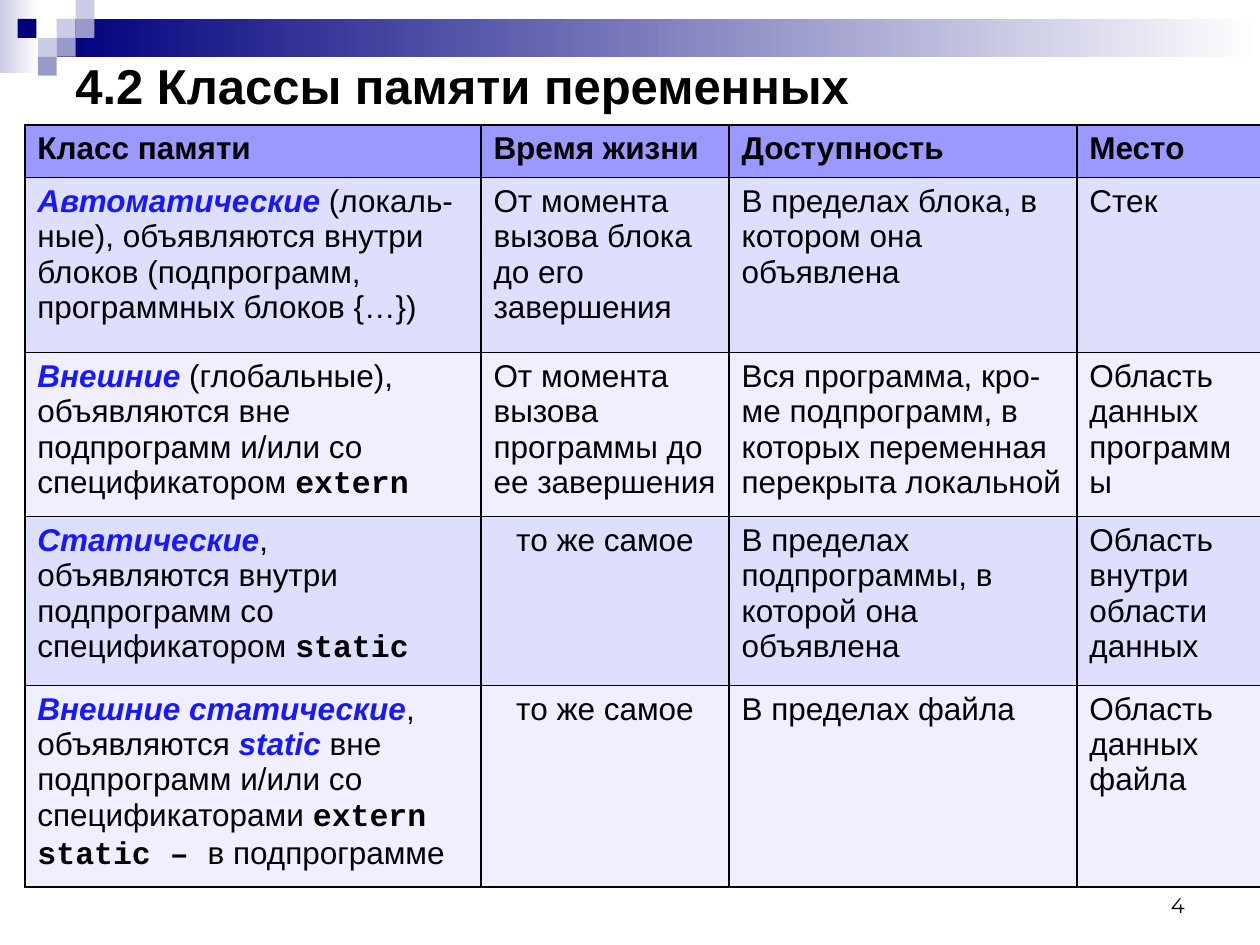
from lxml import etree
from pptx import Presentation
from pptx.dml.color import RGBColor
from pptx.enum.shapes import MSO_SHAPE
from pptx.enum.text import MSO_ANCHOR, PP_ALIGN
from pptx.oxml.ns import qn
from pptx.util import Pt

RECTANGLE = MSO_SHAPE.RECTANGLE
LEFT, CENTER, RIGHT = PP_ALIGN.LEFT, PP_ALIGN.CENTER, PP_ALIGN.RIGHT
MIDDLE, BOTTOM = MSO_ANCHOR.MIDDLE, MSO_ANCHOR.BOTTOM

NAVY, LILAC, VIOLET, WHITE, BLACK = "00007D", "CCCCE6", "9999CC", "FFFFFF", "000000"
HEADER_FILL, ROW_FILLS = "9999FF", ("DEDEFF", "EFEFFF")
TERM = {"color": "1818FF", "bold": True, "italic": True}
CODE = {"font": "Courier New", "bold": True}
HEADER = {"bold": True}
PLAIN = {}

GRID = 10.8
SQUARES = [(3, 1, LILAC), (4, 0, LILAC), (4, 1, VIOLET), (2, 2, LILAC),
           (0.93, 1, NAVY), (3, 2, VIOLET), (2, 3, VIOLET)]
COLUMN_WIDTHS = (260.64, 141.84, 198.72, 105.12)
ROW_HEIGHTS = (30.24, 100.08, 93.6, 96.48, 111)
HEADINGS = ("Класс памяти", "Время жизни", "Доступность", "Место")
CLASSES = [
    ([("Автоматические ", TERM),
      ("(локаль-ные), объявляются внутри блоков (подпрограмм, программных блоков {…})", PLAIN)],
     "От момента вызова блока до его завершения",
     "В пределах блока, в котором она объявлена",
     "Стек"),
    ([("Внешние", TERM),
      (" (глобальные), объявляются вне подпрограмм и/или со спецификатором ", PLAIN),
      ("extern", CODE)],
     "От момента вызова программы до ее завершения",
     "Вся программа, кро-ме подпрограмм, в которых переменная перекрыта локальной",
     "Область данных программы"),
    ([("Статические", TERM),
      (", объявляются внутри подпрограмм со спецификатором ", PLAIN),
      ("static", CODE)],
     "то же самое",
     "В пределах подпрограммы, в которой она объявлена",
     "Область внутри области данных"),
    ([("Внешние статические", TERM), (", объявляются ", PLAIN), ("static ", TERM),
      ("вне подпрограмм и/или со спецификаторами ", PLAIN),
      ("extern static – ", CODE), ("в подпрограмме", PLAIN)],
     "то же самое",
     "В пределах файла",
     "Область данных\nфайла"),
]


def rgb(value):
    """Return the colour for a hex string."""
    return RGBColor.from_string(value)


def add_span(para, text, size=18, font="Arial", color=BLACK, bold=False, italic=False):
    """Append formatted text to a paragraph."""
    span = para.add_run()
    span.text = text
    span.font.size = Pt(size)
    span.font.name = font
    span.font.color.rgb = rgb(color)
    span.font.bold = bold
    span.font.italic = italic


def add_border(cell, color=BLACK, width=1):
    """Draw a solid line on all four sides of a cell."""
    properties = cell._tc.get_or_add_tcPr()
    for side in ("a:lnL", "a:lnR", "a:lnT", "a:lnB"):
        line = etree.SubElement(properties, qn(side), w=str(Pt(width)))
        fill = etree.SubElement(line, qn("a:solidFill"))
        etree.SubElement(fill, qn("a:srgbClr"), val=color)


class SlideBuilder:
    """Hold the current slide and draw each kind of element on it."""

    def __init__(self, slide):
        """Keep the slide to draw on."""
        self.slide = slide

    def block(self, left, top, width, height, color, end_color=None):
        """Add a plain rectangle, faded to the right if an end colour is given."""
        shape = self.slide.shapes.add_shape(
            RECTANGLE, Pt(left), Pt(top), Pt(width), Pt(height))
        shape.shadow.inherit = False
        shape.line.fill.background()
        if end_color:
            shape.fill.gradient()
            shape.fill.gradient_angle = 0
            for stop, stop_color in zip(shape.fill.gradient_stops, (color, end_color)):
                stop.color.rgb = rgb(stop_color)
        else:
            shape.fill.solid()
            shape.fill.fore_color.rgb = rgb(color)

    def text(self, left, top, width, height, text, anchor, align=LEFT, **style):
        """Add a wrapped text box with one paragraph."""
        box = self.slide.shapes.add_textbox(Pt(left), Pt(top), Pt(width), Pt(height))
        frame = box.text_frame
        frame.word_wrap = True
        frame.vertical_anchor = anchor
        para = frame.paragraphs[0]
        para.alignment = align
        add_span(para, text, **style)

    def cell(self, cell, spans, fill, align=LEFT):
        """Fill a table cell with formatted spans, splitting paragraphs at newlines."""
        add_border(cell)
        cell.fill.solid()
        cell.fill.fore_color.rgb = rgb(fill)
        para = cell.text_frame.paragraphs[0]
        para.alignment = align
        for text, style in spans:
            for index, part in enumerate(text.split("\n")):
                if index:
                    para = cell.text_frame.add_paragraph()
                    para.alignment = align
                add_span(para, part, **style)

    def table(self, left, top, widths, heights, headings, rows):
        """Add a table with a header and alternating row fills."""
        table = self.slide.shapes.add_table(
            len(heights), len(widths), Pt(left), Pt(top),
            Pt(sum(widths)), Pt(sum(heights))).table
        for column, width in zip(table.columns, widths):
            column.width = Pt(width)
        for row, height in zip(table.rows, heights):
            row.height = Pt(height)
        for index, heading in enumerate(headings):
            self.cell(table.cell(0, index), [(heading, HEADER)], HEADER_FILL)
        for row_index, row in enumerate(rows, 1):
            fill = ROW_FILLS[(row_index - 1) % 2]
            for index, content in enumerate(row):
                spans = [(content, PLAIN)] if isinstance(content, str) else content
                align = CENTER if content == "то же самое" else LEFT
                self.cell(table.cell(row_index, index), spans, fill, align)


def main():
    """Build and save the deck."""
    deck = Presentation()
    deck.slide_width, deck.slide_height = Pt(720), Pt(540)
    page = SlideBuilder(deck.slides.add_slide(deck.slide_layouts[6]))
    page.block(0, 0, 22.3, 41.8, LILAC, WHITE)
    page.block(3 * GRID, GRID, 720 - 3 * GRID, 2 * GRID, NAVY, WHITE)
    for column, row, color in SQUARES:
        page.block(column * GRID, row * GRID, GRID, GRID, color)
    page.text(36, 31.7, 648, 33.8, "4.2 Классы памяти переменных", MIDDLE,
              size=28, bold=True)
    page.text(516, 492, 168, 36, "4", BOTTOM, RIGHT, size=12, font="Montserrat")
    page.table(14.2, 71.3, COLUMN_WIDTHS, ROW_HEIGHTS, HEADINGS, CLASSES)
    deck.save("out.pptx")


if __name__ == "__main__":
    main()
